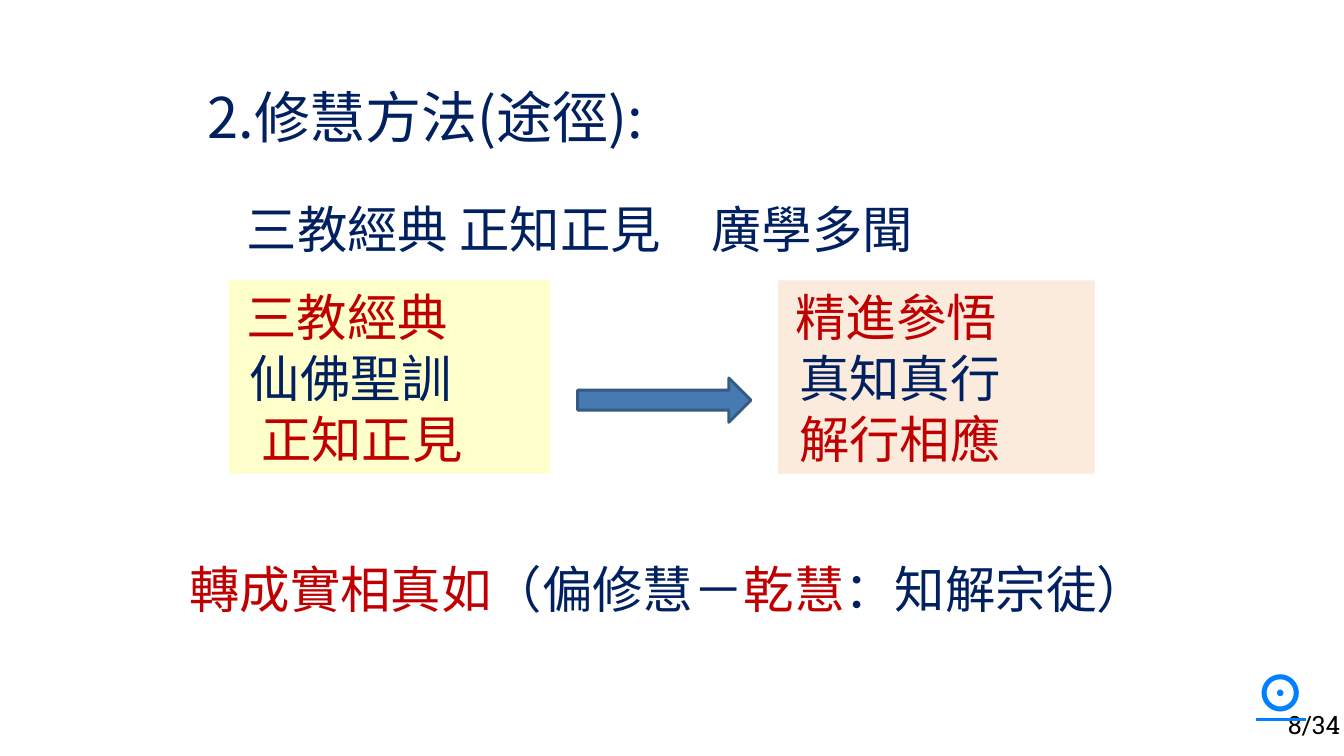
from pptx import Presentation
from pptx.dml.color import RGBColor
from pptx.enum.shapes import MSO_SHAPE
from pptx.enum.text import MSO_ANCHOR, PP_ALIGN
from pptx.oxml.ns import qn
from pptx.util import Pt

NAVY = RGBColor(0x00, 0x20, 0x60)
RED = RGBColor(0xC0, 0x00, 0x00)
YELLOW = RGBColor(0xFF, 0xFF, 0xCC)
PEACH = RGBColor(0xFA, 0xEB, 0xDD)
ARROW_BLUE = RGBColor(0x47, 0x7A, 0xB1)
ARROW_EDGE = RGBColor(0x35, 0x5A, 0x83)
BRIGHT_BLUE = RGBColor(0x00, 0x80, 0xFF)
BLACK = RGBColor(0x00, 0x00, 0x00)
SANS = "Noto Sans CJK SC"
SANS_TC = "Noto Sans CJK TC"
SLAB = "Roboto Slab"


def add_run(p, text, color, size=36, name=SANS, **extra):
    """Append a run with the given font values."""
    r = p.add_run()
    r.text = text
    for key, value in {"size": Pt(size), "name": name, **extra}.items():
        setattr(r.font, key, value)
    r.font.color.rgb = color
    r.font._element.find(qn("a:latin")).addnext(
        r.font._element.makeelement(qn("a:ea"), {"typeface": name}))


def format_paragraph(p, indent=0, spacing=None, tabs=()):
    """Set indent, line spacing and tab stops of a paragraph."""
    p.alignment = PP_ALIGN.LEFT
    p.line_spacing = spacing
    pPr = p._p.get_or_add_pPr()
    pPr.set("marL", "0")
    pPr.set("indent", str(Pt(indent)))
    if tabs:
        tab_list = pPr.makeelement(qn("a:tabLst"), {})
        for stop in tabs:
            tab = tab_list.makeelement(qn("a:tab"), {"pos": str(Pt(stop)), "algn": "l"})
            tab_list.append(tab)
        pPr.append(tab_list)


def add_text_box(s, box, wrap=True):
    """Add an empty text box and return its text frame."""
    tf = s.shapes.add_textbox(*map(Pt, box)).text_frame
    tf.word_wrap = wrap
    return tf


def add_heading(s, box):
    """Add the title and the line of three phrases beneath it."""
    tf = add_text_box(s, box)
    p = tf.paragraphs[0]
    format_paragraph(p, spacing=Pt(78))
    add_run(p, "2.修慧方法(途徑):", NAVY, 40)
    p = tf.add_paragraph()
    indent, step = 28, 160
    format_paragraph(p, indent, Pt(78), [indent + step * i for i in (1, 2)])
    add_run(p, "三教經典\t正知正見\t廣學多聞", NAVY)


def add_panel(s, box, fill, lines):
    """Add a filled panel with indented lines of text."""
    sp = s.shapes.add_shape(MSO_SHAPE.RECTANGLE, *map(Pt, box))
    sp.shadow.inherit = False
    sp.fill.solid()
    sp.fill.fore_color.rgb = fill
    sp.line.fill.background()
    tf = sp.text_frame
    tf.word_wrap = True
    tf.vertical_anchor = MSO_ANCHOR.TOP
    for i, (text, color, indent) in enumerate(lines):
        p = tf.add_paragraph() if i else tf.paragraphs[0]
        format_paragraph(p, indent, Pt(43.6))
        add_run(p, text, color)


def add_arrow(s, box):
    """Add the arrow between the panels."""
    sp = s.shapes.add_shape(MSO_SHAPE.RIGHT_ARROW, *map(Pt, box))
    sp.shadow.inherit = False
    sp.adjustments[0] = 0.45
    sp.fill.solid()
    sp.fill.fore_color.rgb = ARROW_BLUE
    sp.line.color.rgb = ARROW_EDGE
    sp.line.width = Pt(2)


def add_conclusion(s, box):
    """Add the closing line in alternating colours."""
    p = add_text_box(s, box, wrap=False).paragraphs[0]
    format_paragraph(p, spacing=Pt(43.6))
    for text, color in (("轉成實相真如", RED), ("（偏修慧－", NAVY),
                        ("乾慧", RED), ("：知解宗徒）", NAVY)):
        add_run(p, text, color)


def add_page_mark(s, box):
    """Add the page number and the round mark above it."""
    left, top, width, height = box
    number = add_text_box(s, (left + 23, top + 34.6, width, 28.8))
    add_run(number.paragraphs[0], "8/34", BLACK, 18, SLAB)
    mark = add_text_box(s, (left, top, 48.2, height))
    format_paragraph(mark.paragraphs[0], spacing=Pt(43.6))
    add_run(mark.paragraphs[0], "⊙", BRIGHT_BLUE, 36, SANS_TC, bold=True, underline=True)


def main():
    """Build the slide and save it."""
    prs = Presentation()
    prs.slide_width, prs.slide_height = Pt(960), Pt(540)
    s = prs.slides.add_slide(prs.slide_layouts[6])
    add_heading(s, (141.1, 25.2, 715.7, 164.9))
    add_panel(s, (163.4, 200.2, 229.7, 138.2), YELLOW,
              [("三教經典", RED, 5.4), ("仙佛聖訓", NAVY, 8), ("正知正見", RED, 16)])
    add_panel(s, (555.8, 200.2, 226.1, 138.2), PEACH,
              [("精進參悟", RED, 5.4), ("真知真行", NAVY, 8), ("解行相應", RED, 8)])
    add_conclusion(s, (128.2, 394.6, 715, 51.1))
    add_arrow(s, (412.6, 270, 123.8, 31.7))
    add_page_mark(s, (889.9, 468.7, 66.2, 51.1))
    prs.save("out.pptx")


if __name__ == "__main__":
    main()
